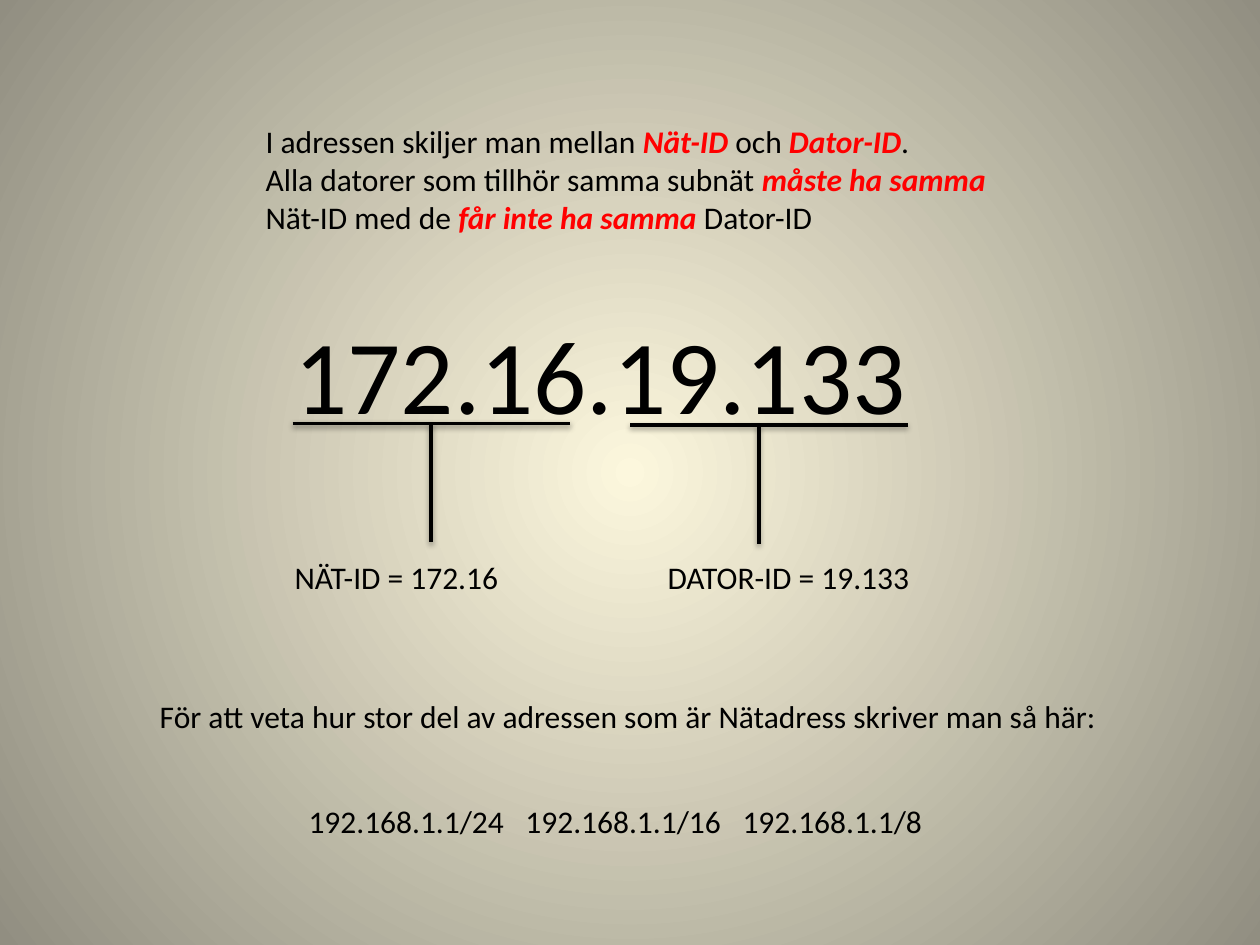
from lxml import etree
from pptx import Presentation
from pptx.dml.color import RGBColor
from pptx.enum.shapes import MSO_CONNECTOR
from pptx.enum.text import MSO_AUTO_SIZE
from pptx.oxml.ns import qn
from pptx.util import Pt

STRAIGHT = MSO_CONNECTOR.STRAIGHT
FIT_SHAPE = MSO_AUTO_SIZE.SHAPE_TO_FIT_TEXT
BLANK_LAYOUT = 6

FONT = "Calibri"
COLORS = {"text": "000000", "emphasis": "FF0000",
          "glow": "FCF7DD", "edge": "918E81"}

# Each paragraph is a list of (wording, emphasised) runs
INTRO = [
    [("I adressen skiljer man mellan ", False), ("Nät-ID", True),
     (" och ", False), ("Dator-ID", True), (".", False)],
    [("Alla datorer som tillhör samma subnät ", False),
     ("måste ha samma", True)],
    [("Nät-ID med de ", False), ("får inte ha samma ", True),
     ("Dator-ID", False)],
]
PREFIX_EXAMPLES = ["192.168.1.1/24", "192.168.1.1/16", "192.168.1.1/8"]


def color(key):
    return RGBColor.from_string(COLORS[key])


def paint_background(slide):
    """Radial gradient, light in the middle."""
    fill = slide.background.fill
    fill.gradient()
    for stop, position, key in zip(fill.gradient_stops, (0, 1), ("glow", "edge")):
        stop.position = position
        stop.color.rgb = color(key)
    gradient = slide.element.find(".//" + qn("a:gradFill"))
    gradient.remove(gradient.find(qn("a:lin")))
    circle = etree.SubElement(gradient, qn("a:path"), {"path": "circle"})
    etree.SubElement(circle, qn("a:fillToRect"),
                     dict.fromkeys("ltrb", "50000"))


def add_text(slide, box, paragraphs, size=18, wrap=False):
    """Text box filled run by run; returns its text frame."""
    frame = slide.shapes.add_textbox(*map(Pt, box)).text_frame
    frame.word_wrap = wrap
    frame.auto_size = FIT_SHAPE
    for index, runs in enumerate(paragraphs):
        paragraph = frame.add_paragraph() if index else frame.paragraphs[0]
        for wording, emphasised in runs:
            run = paragraph.add_run()
            run.text = wording
            run.font.name = FONT
            run.font.size = Pt(size)
            run.font.bold = run.font.italic = emphasised
            run.font.color.rgb = color("emphasis" if emphasised else "text")
    return frame


def add_line(slide, start, end):
    """Black line with a soft shadow below it."""
    line = slide.shapes.add_connector(STRAIGHT, *map(Pt, start + end))
    line.line.color.rgb = color("text")
    line.line.width = Pt(2)
    effects = etree.SubElement(line.element.spPr, qn("a:effectLst"))
    shadow = etree.SubElement(effects, qn("a:outerShdw"), {
        "blurRad": str(Pt(3.1)), "dist": str(Pt(1.6)),
        "dir": "5400000", "rotWithShape": "0"})
    tint = etree.SubElement(shadow, qn("a:srgbClr"), {"val": COLORS["text"]})
    etree.SubElement(tint, qn("a:alpha"), {"val": "38000"})


def add_address_part(slide, box, stem_x, label, label_box):
    """Underline along the top of the box, a stem down, and a label."""
    left, top, width, height = box
    add_line(slide, (left, top), (left + width, top))
    add_line(slide, (stem_x, top), (stem_x, top + height))
    add_text(slide, label_box, [[(label, False)]])


def add_prefix_row(slide, box, pitch):
    """Addresses on one line, set apart by equally spaced tab stops."""
    frame = add_text(slide, box, [[("\t".join(PREFIX_EXAMPLES), False)]], wrap=True)
    properties = frame.paragraphs[0]._p.get_or_add_pPr()
    tabs = etree.SubElement(properties, qn("a:tabLst"))
    for column in range(1, len(PREFIX_EXAMPLES)):
        etree.SubElement(tabs, qn("a:tab"),
                         {"pos": str(Pt(column * pitch)), "algn": "l"})


def main():
    prs = Presentation()
    prs.slide_width, prs.slide_height = Pt(720), Pt(540)
    slide = prs.slides.add_slide(prs.slide_layouts[BLANK_LAYOUT])
    paint_background(slide)

    # Explanation
    add_text(slide, (144.7, 66.2, 430.6, 72.7), INTRO)

    # Address split into network and host
    add_text(slide, (161.3, 173.5, 367.2, 80), [[("172.16.19.133", False)]], size=60)
    add_address_part(slide, (167.3, 241.9, 158.7, 68), 246.3,
                     "NÄT-ID = 172.16", (161.3, 315.4, 133.2, 29))
    add_address_part(slide, (360, 242.8, 158.7, 68), 433.6,
                     "DATOR-ID = 19.133", (374.4, 315.4, 154.1, 29))

    # Prefix notation
    add_text(slide, (84.2, 394.6, 550.8, 29), [[(
        "För att veta hur stor del av adressen som är Nätadress skriver man så här:",
        False)]])
    add_prefix_row(slide, (169.2, 455, 368.6, 29), 124)

    prs.save("out.pptx")


if __name__ == "__main__":
    main()
